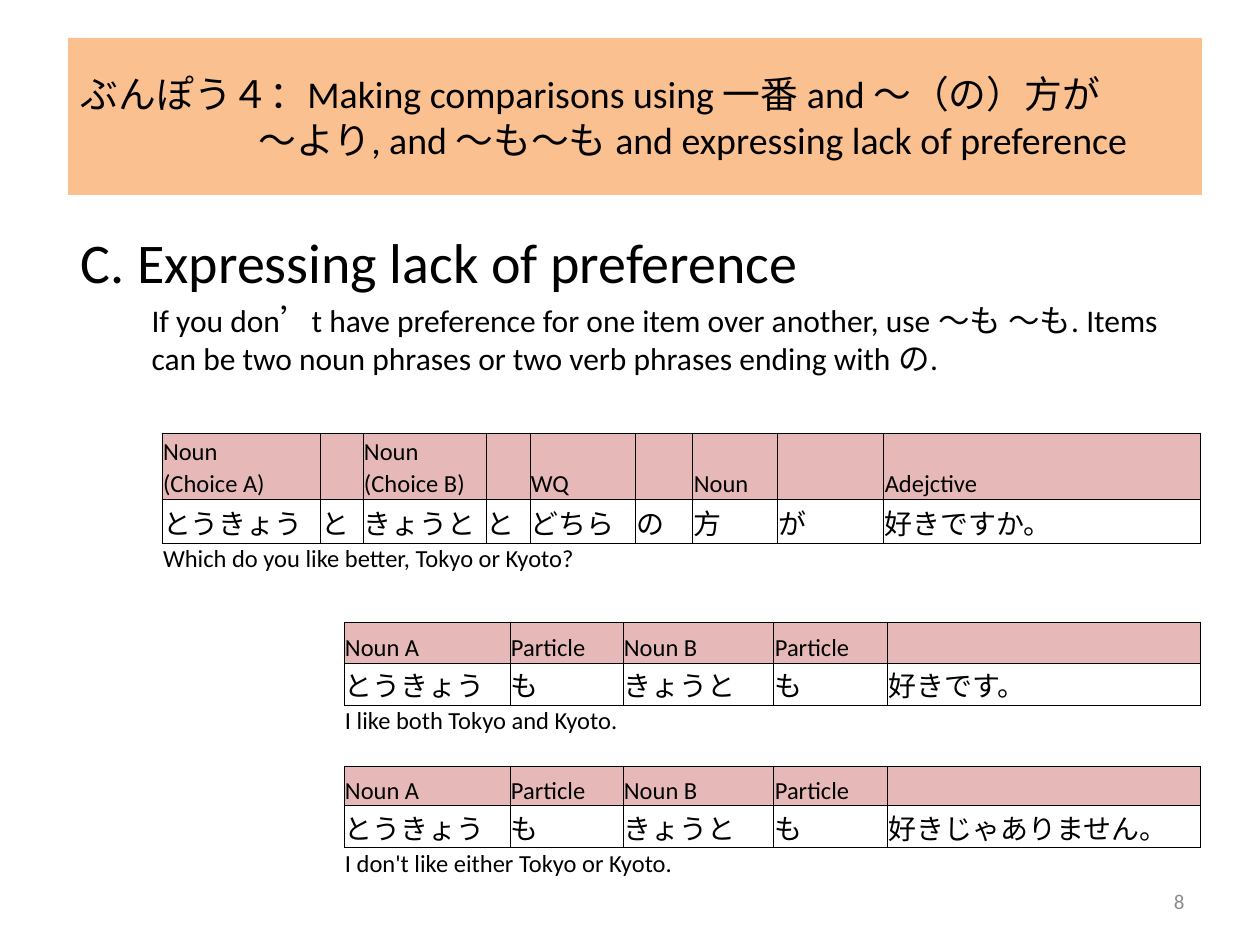
from dataclasses import dataclass
from pptx import Presentation
from pptx.dml.color import RGBColor
from pptx.enum.text import MSO_ANCHOR as Anchor, PP_ALIGN as Align
from pptx.oxml.ns import qn
from pptx.oxml.xmlchemy import OxmlElement as Element
from pptx.util import Pt

PX = 914400 // 126
COLORS = {"ink": "000000", "banner": "FAC090", "header": "E6B9B8", "number": "8C8C8C"}
NO_STYLE = "{2D5ABB26-0587-4C30-8999-92F81FD0307C}"
ROW_STYLES = {
    "header": (14, "header", "LRTB"),
    "header_top": (14, "header", "LRT"),
    "header_base": (14, "header", "LRB"),
    "example": (16, None, "LRTB"),
    "caption": (14, None, "T"),
    "gap": (14, None, "B"),
}


def write(paragraph, text, size=14, color="ink", font="Calibri", align=Align.LEFT, margin=0, indent=0):
    """Put formatted text into a paragraph."""
    paragraph.alignment = align
    properties = paragraph._p.get_or_add_pPr()
    properties.set("marL", str(margin * PX))
    properties.set("indent", str(indent * PX))
    properties.append(Element("a:buNone"))
    if not text:
        paragraph._p.get_or_add_endParaRPr().set("sz", str(size * 100))
        return
    run = paragraph.add_run()
    run.text = text
    run.font.size = Pt(size)
    run.font.name = font
    run.font.color.rgb = RGBColor.from_string(COLORS[color])


@dataclass
class GrammarSlide:
    """Styled builder for one grammar slide."""

    slide: object
    line_width: float = 0.5

    def place(self, shape, left, top, width, height):
        """Move and size a shape in px."""
        shape.left, shape.top = left * PX, top * PX
        shape.width, shape.height = width * PX, height * PX

    def paragraphs(self, frame, lines):
        """Fill a text frame with one paragraph per line."""
        for index, (text, style) in enumerate(lines):
            write(frame.add_paragraph() if index else frame.paragraphs[0], text, **style)

    def title(self, lines, *box):
        """Fill the title banner."""
        banner = self.slide.shapes.title
        self.place(banner, *box)
        banner.fill.solid()
        banner.fill.fore_color.rgb = RGBColor.from_string(COLORS["banner"])
        banner.text_frame.vertical_anchor = Anchor.MIDDLE
        self.paragraphs(banner.text_frame, lines)

    def body(self, lines, *box):
        """Fill the body placeholder."""
        explanation = self.slide.placeholders[1]
        self.place(explanation, *box)
        self.paragraphs(explanation.text_frame, lines)

    def page_number(self, number, left, top, width, height):
        """Add the page number."""
        box = self.slide.shapes.add_textbox(left * PX, top * PX, width * PX, height * PX)
        box.text_frame.word_wrap = True
        box.text_frame.vertical_anchor = Anchor.MIDDLE
        write(box.text_frame.paragraphs[0], number, size=12, color="number", align=Align.RIGHT)

    def cell(self, cell, text, kind):
        """Style and fill one table cell."""
        size, fill, sides = ROW_STYLES[kind]
        properties = cell._tc.get_or_add_tcPr()
        for side in "LRTB":
            line = Element(f"a:ln{side}")
            line.set("w", str(Pt(self.line_width)))
            if side in sides:
                paint = Element("a:solidFill")
                ink = Element("a:srgbClr")
                ink.set("val", COLORS["ink"])
                paint.append(ink)
            else:
                paint = Element("a:noFill")
            line.append(paint)
            properties.append(line)
        if fill:
            cell.fill.solid()
            cell.fill.fore_color.rgb = RGBColor.from_string(COLORS[fill])
        else:
            cell.fill.background()
        cell.margin_left = cell.margin_right = cell.margin_top = PX
        cell.margin_bottom = 0
        cell.vertical_anchor = Anchor.BOTTOM
        write(cell.text_frame.paragraphs[0], text, size=size)

    def table(self, left, top, widths, rows, caption_span):
        """Add a sentence pattern table."""
        heights = [height for _, height, _ in rows]
        table = self.slide.shapes.add_table(
            len(rows), len(widths), left * PX, top * PX, sum(widths) * PX, sum(heights) * PX
        ).table
        table.first_row = table.horz_banding = False
        table._tbl.tblPr.find(qn("a:tableStyleId")).text = NO_STYLE
        for column, width in zip(table.columns, widths):
            column.width = width * PX
        for r, (kind, height, texts) in enumerate(rows):
            table.rows[r].height = height * PX
            for c in range(len(widths)):
                self.cell(table.cell(r, c), texts[c] if c < len(texts) else "", kind)
            if kind == "caption":
                table.cell(r, 0).merge(table.cell(r, caption_span - 1))


def main():
    """Build the slide and save it."""
    deck = Presentation()
    deck.slide_width, deck.slide_height = 1260 * PX, 945 * PX
    page = GrammarSlide(deck.slides.add_slide(deck.slide_layouts[1]))
    page.title([
        ("ぶんぽう４：Making comparisons using 一番 and ～（の）方が", {"size": 21.6}),
        ("～より, and ～も～も and expressing lack of preference", {"size": 21.6, "margin": 178}),
    ], 68, 38, 1134, 157)
    page.body([
        ("C. Expressing lack of preference", {"size": 32, "margin": 71, "indent": -71}),
        ("If you don’t have preference for one item over another, use ～も ～も. "
         "Items can be two noun phrases or two verb phrases ending with の.", {"size": 18, "margin": 71}),
    ], 68, 221, 1134, 624)
    page.page_number("8", 903, 876, 294, 50)

    answer_header = ["Noun A", "Particle", "Noun B", "Particle"]
    answer_words = ["とうきょう", "も", "きょうと", "も"]
    page.table(344, 622, [166, 113, 151, 114, 313], [
        ("header", 41, answer_header),
        ("example", 42, answer_words + ["好きです。"]),
        ("caption", 31, ["I like both Tokyo and Kyoto."]),
        ("gap", 31, []),
        ("header", 39, answer_header),
        ("example", 42, answer_words + ["好きじゃありません。"]),
        ("caption", 28, ["I don't like either Tokyo or Kyoto."]),
    ], caption_span=3)
    page.table(162, 433, [158, 43, 123, 44, 106, 57, 85, 106, 317], [
        ("header_top", 34, ["Noun", "", "Noun"]),
        ("header_base", 32, ["(Choice A)", "", "(Choice B)", "", "WQ", "", "Noun", "", "Adejctive"]),
        ("example", 44, ["とうきょう", "と", "きょうと", "と", "どちら", "の", "方", "が", "好きですか。"]),
        ("caption", 31, ["Which do you like better, Tokyo or Kyoto?"]),
    ], caption_span=5)
    deck.save("out.pptx")


if __name__ == "__main__":
    main()
